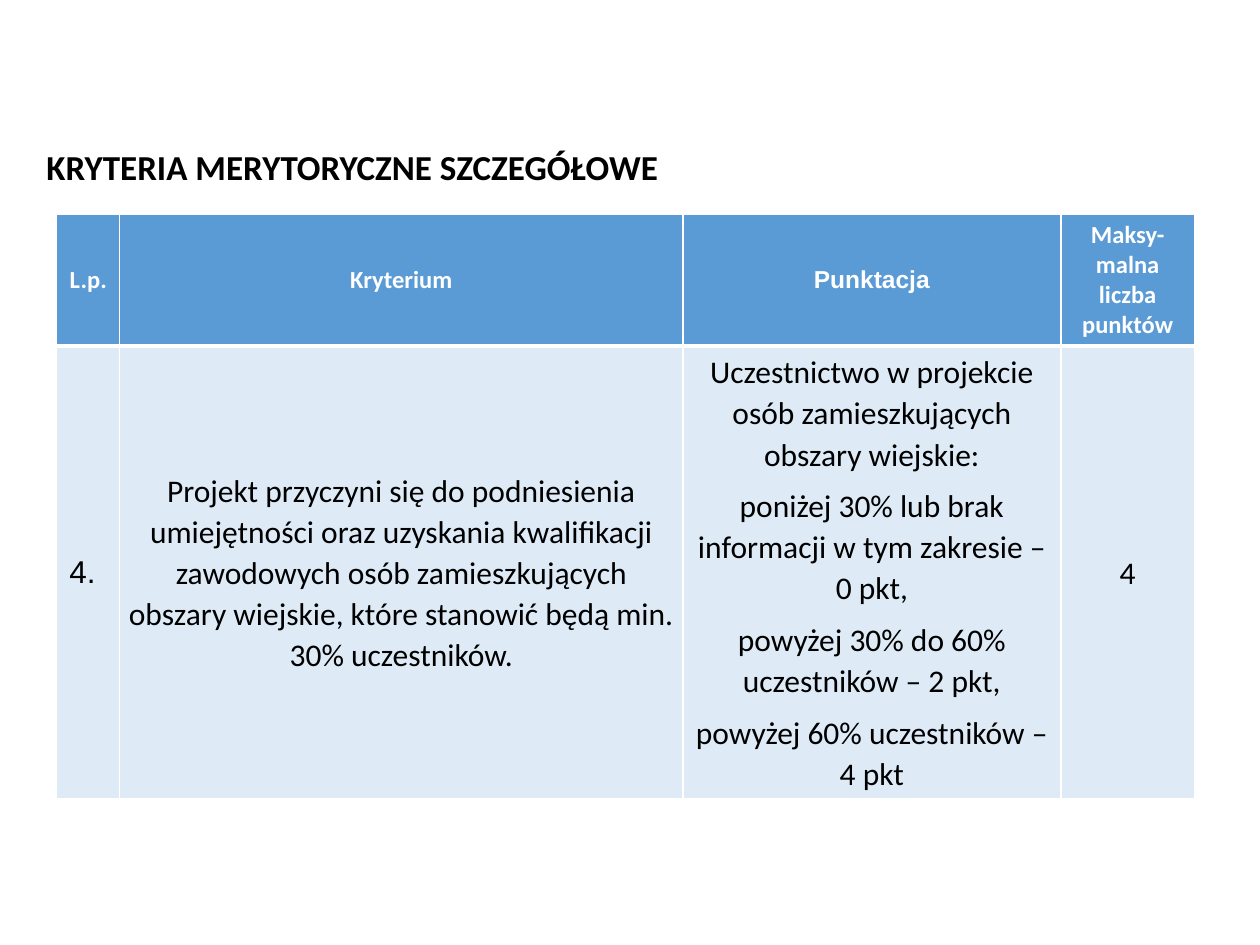
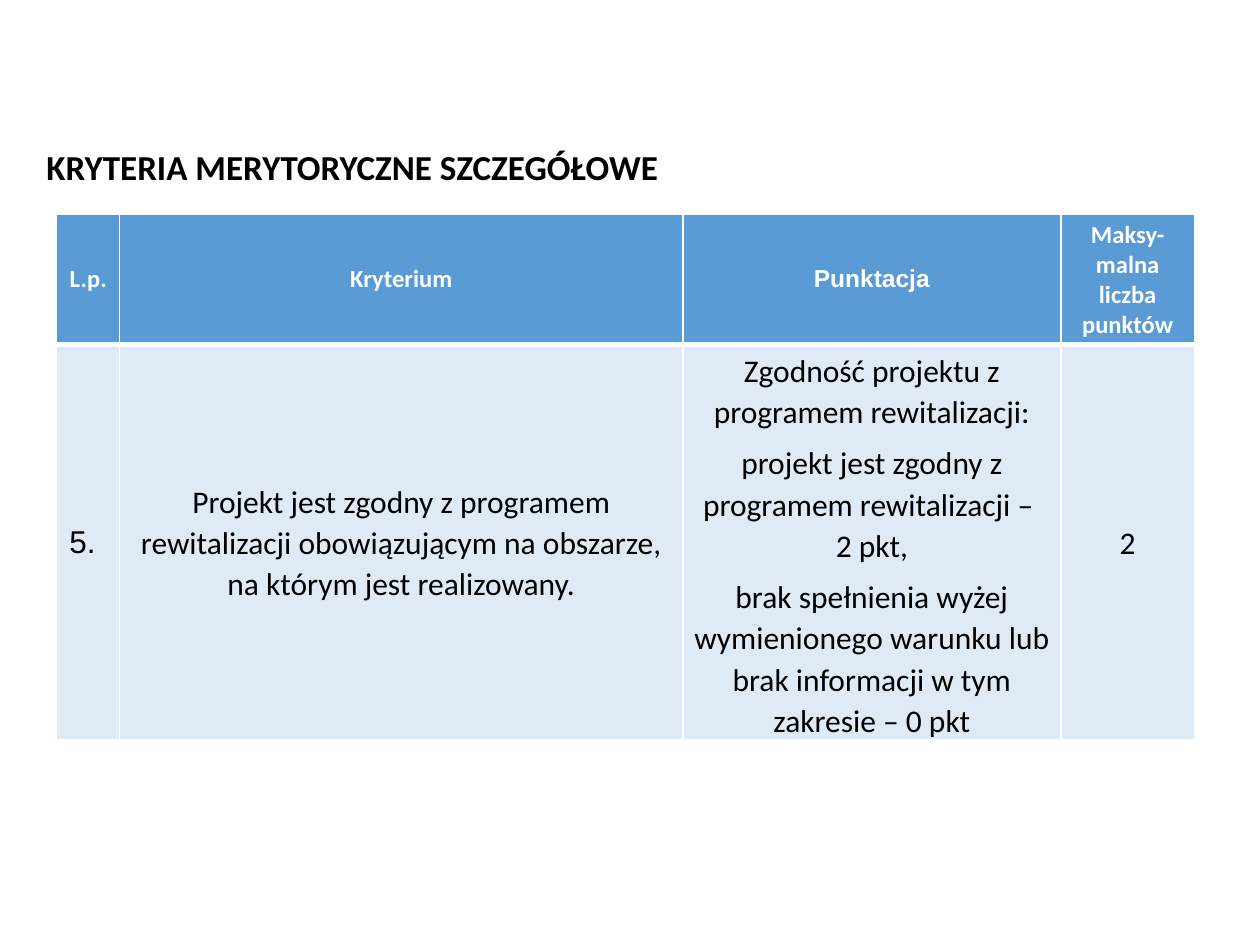
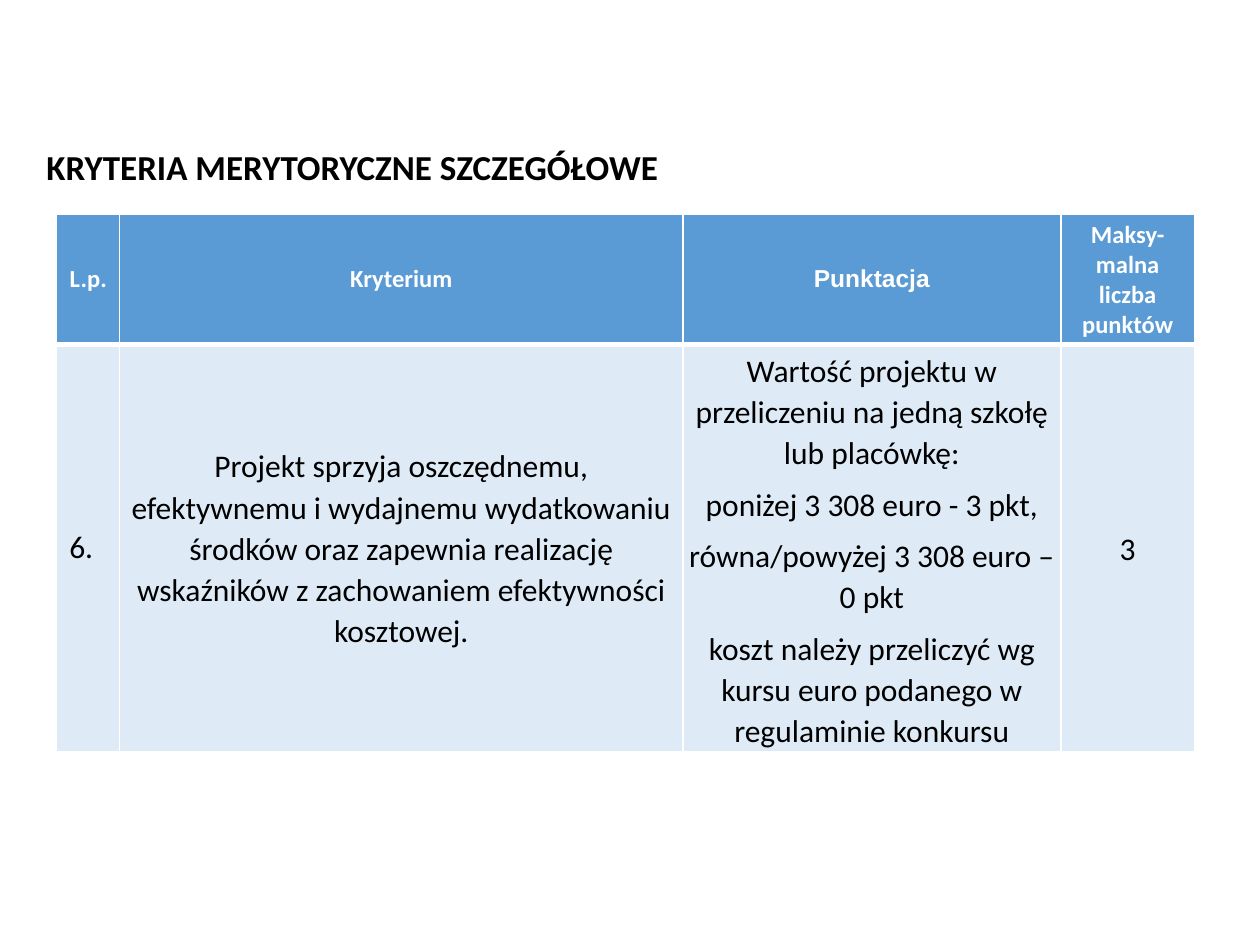
from lxml.etree import SubElement
from pptx import Presentation
from pptx.dml.color import RGBColor
from pptx.enum.text import MSO_ANCHOR, MSO_AUTO_SIZE, PP_ALIGN
from pptx.oxml.ns import qn
from pptx.util import Inches, Pt

# Content
TITLE = "KRYTERIA MERYTORYCZNE SZCZEGÓŁOWE"
HEADERS = [
    ("L.p.", "Calibri"),
    ("Kryterium", "Calibri"),
    ("Punktacja", "Arial"),
    ("Maksy-malna liczba punktów", "Calibri"),
]
CRITERIA = [
    {
        "number": "4.", "number_font": "Arial", "maximum": "4", "table_height": 4.56,
        "criterion": "Projekt przyczyni się do podniesienia umiejętności oraz uzyskania "
                     "kwalifikacji zawodowych osób zamieszkujących obszary wiejskie, "
                     "które stanowić będą min. 30% uczestników.",
        "scoring": [
            "Uczestnictwo w projekcie osób zamieszkujących obszary wiejskie:",
            "poniżej 30% lub brak informacji w tym zakresie – 0 pkt,",
            "powyżej 30% do 60% uczestników – 2 pkt,",
            "powyżej 60% uczestników – 4 pkt",
        ],
    },
    {
        "number": "5.", "number_font": "Arial", "maximum": "2", "table_height": 4.15,
        "criterion": "Projekt jest zgodny z programem rewitalizacji obowiązującym "
                     "na obszarze, na którym jest realizowany.",
        "scoring": [
            "Zgodność projektu z programem rewitalizacji:",
            "projekt jest zgodny z programem rewitalizacji – \n2 pkt,",
            "brak spełnienia wyżej wymienionego warunku lub brak informacji "
            "w tym zakresie – 0 pkt",
        ],
    },
    {
        "number": "6.", "number_font": "Calibri", "maximum": "3", "table_height": 4.24,
        "criterion": "Projekt sprzyja oszczędnemu, efektywnemu i wydajnemu wydatkowaniu "
                     "środków oraz zapewnia realizację wskaźników z zachowaniem "
                     "efektywności kosztowej.",
        "scoring": [
            "Wartość projektu w przeliczeniu na jedną szkołę lub placówkę:",
            "poniżej 3 308 euro - 3 pkt,",
            "równa/powyżej 3 308 euro – 0 pkt",
            "koszt należy przeliczyć wg kursu euro podanego w regulaminie konkursu",
        ],
    },
]

# Shared look, lengths in inches
BLACK, WHITE, HEADER_BLUE, BODY_BLUE = "000000", "FFFFFF", "5B9BD5", "DEEBF7"
COLUMN_WIDTHS = [0.5, 4.47, 3, 1.06]
TABLE_LEFT, TABLE_TOP, HEADER_HEIGHT = 0.45, 1.7, 1.01
THIN, THICK = 1, 3


def color(value):
    return RGBColor.from_string(value)


def write(frame, text, *, size=18, font="Calibri", ink=BLACK, bold=False,
          align=PP_ALIGN.CENTER, line_spacing=None, gap=None):
    """Fill a text frame with one paragraph, or with a list of them."""
    lines = [text] if isinstance(text, str) else text
    for index, line in enumerate(lines):
        paragraph = frame.add_paragraph() if index else frame.paragraphs[0]
        paragraph.text = line
        paragraph.alignment = align
        if line_spacing:
            paragraph.line_spacing = line_spacing
        if gap and index:
            paragraph.space_before = Pt(gap)
        for run in paragraph.runs:
            run.font.size, run.font.name, run.font.bold = Pt(size), font, bold
            run.font.color.rgb = color(ink)


def style_cell(cell, fill, *, top=THIN, bottom=THIN, inset=None, anchor=MSO_ANCHOR.MIDDLE):
    properties = cell._tc.get_or_add_tcPr()
    sides = {"a:lnL": THIN, "a:lnR": THIN, "a:lnT": top, "a:lnB": bottom}
    for tag, width in sides.items():
        border = SubElement(properties, qn(tag), w=str(Pt(width)))
        SubElement(SubElement(border, qn("a:solidFill")), qn("a:srgbClr"), val=WHITE)
    cell.fill.solid()
    cell.fill.fore_color.rgb = color(fill)
    cell.vertical_anchor = anchor
    if inset is not None:
        cell.margin_left = cell.margin_right = Inches(inset)
        cell.margin_top = cell.margin_bottom = Inches(inset)


def add_title(slide):
    box = slide.shapes.add_textbox(Inches(0.27), Inches(1.1), Inches(5.18), Inches(0.44))
    frame = box.text_frame
    frame.word_wrap = False
    frame.auto_size = MSO_AUTO_SIZE.SHAPE_TO_FIT_TEXT
    frame.vertical_anchor = MSO_ANCHOR.MIDDLE
    write(frame, TITLE, size=20, bold=True, align=PP_ALIGN.LEFT)


def add_criterion_table(slide, item):
    height = item["table_height"]
    table = slide.shapes.add_table(
        2, len(COLUMN_WIDTHS), Inches(TABLE_LEFT), Inches(TABLE_TOP),
        Inches(sum(COLUMN_WIDTHS)), Inches(height)).table
    for column, width in zip(table.columns, COLUMN_WIDTHS):
        column.width = Inches(width)
    for row, row_height in zip(table.rows, (HEADER_HEIGHT, height - HEADER_HEIGHT)):
        row.height = Inches(row_height)

    # Header row
    for column, (label, font) in enumerate(HEADERS):
        cell = table.cell(0, column)
        style_cell(cell, HEADER_BLUE, bottom=THICK)
        write(cell.text_frame, label, size=14, font=font, ink=WHITE, bold=True)

    # Criterion row
    number = table.cell(1, 0)
    style_cell(number, BODY_BLUE, top=THICK)
    write(number.text_frame, item["number"], font=item["number_font"], align=PP_ALIGN.LEFT)
    for column, key in enumerate(("criterion", "scoring", "maximum"), start=1):
        cell = table.cell(1, column)
        anchor = MSO_ANCHOR.TOP if key == "scoring" else MSO_ANCHOR.MIDDLE
        style_cell(cell, BODY_BLUE, top=THICK, inset=0.04, anchor=anchor)
        write(cell.text_frame, item[key], line_spacing=1.07, gap=6)


def main():
    presentation = Presentation()
    presentation.slide_width, presentation.slide_height = Inches(10), Inches(7.5)
    for item in CRITERIA:
        slide = presentation.slides.add_slide(presentation.slide_layouts[6])
        add_criterion_table(slide, item)
        add_title(slide)
    presentation.save("out.pptx")


if __name__ == "__main__":
    main()
